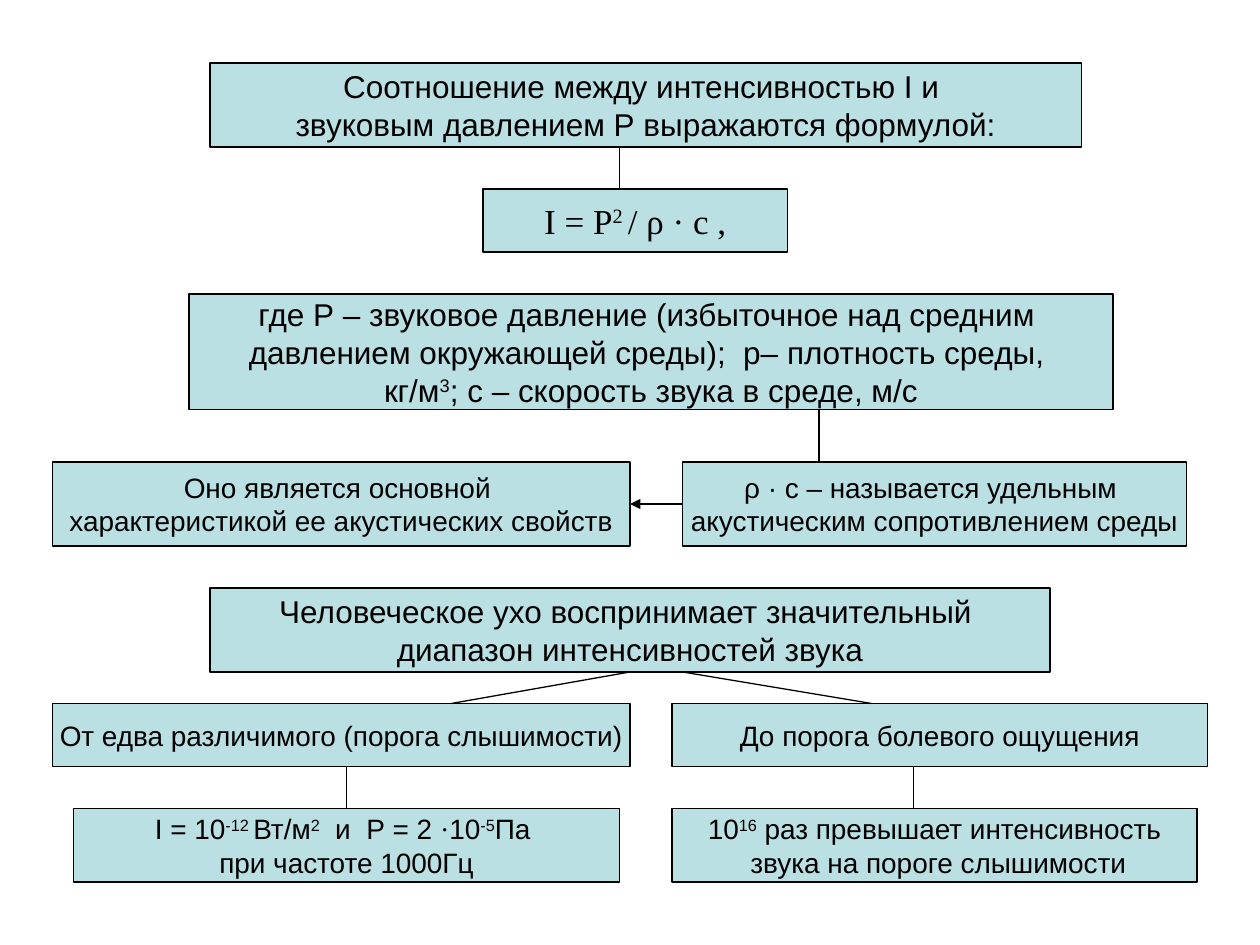
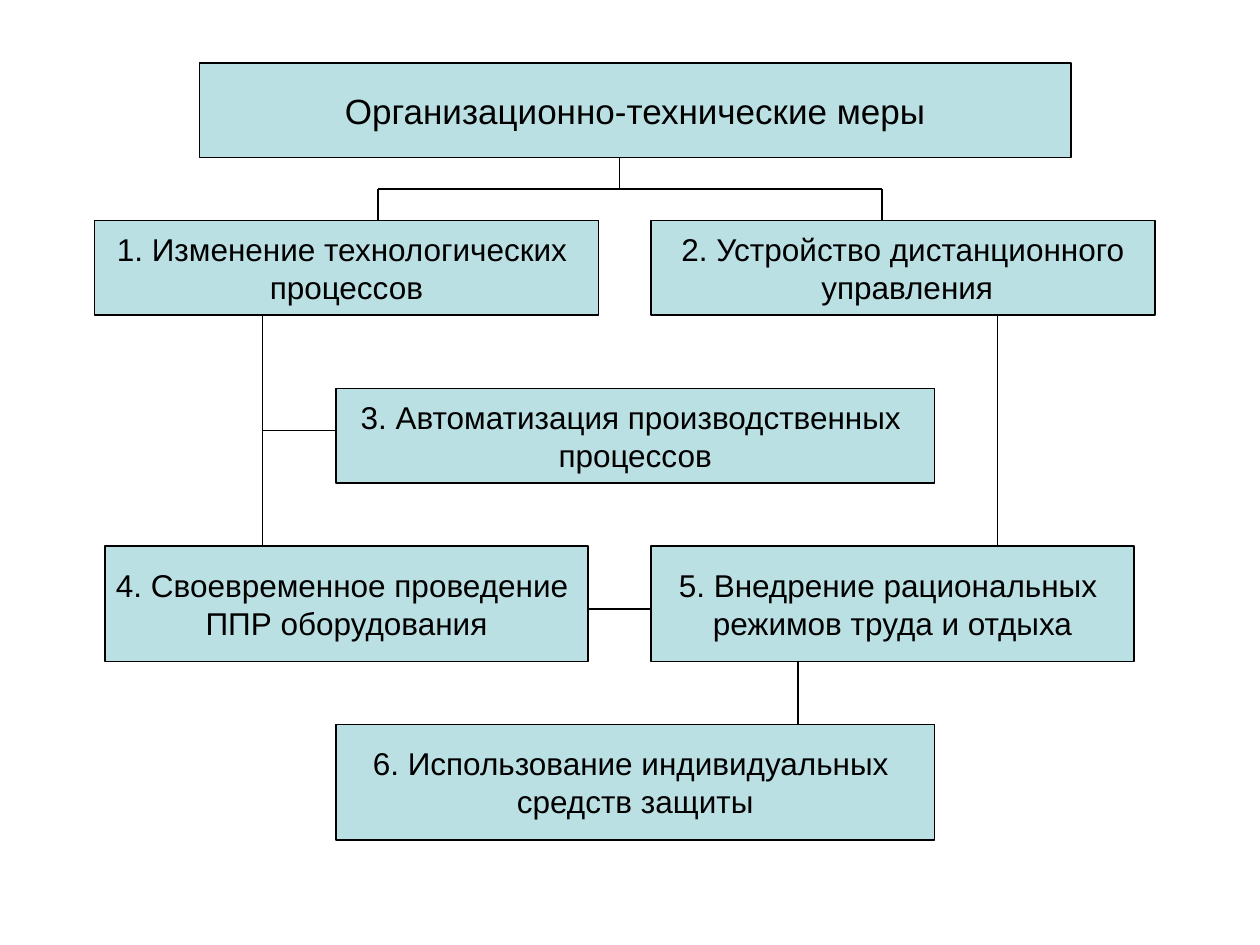
from pptx import Presentation
from pptx.dml.color import RGBColor
from pptx.enum.shapes import MSO_CONNECTOR, MSO_SHAPE
from pptx.enum.text import MSO_ANCHOR, MSO_AUTO_SIZE, PP_ALIGN
from pptx.oxml.ns import qn
from pptx.util import Pt
from lxml import etree

RECTANGLE = MSO_SHAPE.RECTANGLE
STRAIGHT = MSO_CONNECTOR.STRAIGHT
CENTER = PP_ALIGN.CENTER
FRAME_FORMAT = {
    "word_wrap": False,
    "auto_size": MSO_AUTO_SIZE.NONE,
    "vertical_anchor": MSO_ANCHOR.MIDDLE,
}
BOX_FILL = "BBE0E3"
INK = "000000"
LINE_WIDTH = Pt(0.75)
SANS = "Arial"
SERIF = "Times New Roman"
TITLE_ONLY = 5

# Runs are separated by |; a leading ^ raises a run and a leading ~ sets it in serif.
SLIDES = [
    {
        "boxes": [
            (120, 36, 498, 48, 18, SANS, ["Соотношение между интенсивностью I и ",
                                          "звуковым давлением Р выражаются формулой:"]),
            (276, 108, 174, 36, 20, SERIF, ["I = P|^2 |/ ρ · с ,"]),
            (108, 168, 528, 66, 18, SANS, ["где Р – звуковое давление (избыточное над средним ",
                                           "давлением окружающей среды);  p– плотность среды, ",
                                           "кг/м|^3|; с – скорость звука в среде, м/с"]),
            (390, 264, 288, 48, 16, SANS, ["ρ · с – называется удельным ",
                                           "акустическим сопротивлением среды"]),
            (30, 264, 330, 48, 16, SANS, ["Оно является основной ",
                                          "характеристикой ее акустических свойств"]),
            (120, 336, 480, 48, 18, SANS, ["Человеческое ухо воспринимает значительный ",
                                           "диапазон интенсивностей звука"]),
            (384, 402, 306, 36, 16, SANS, ["До порога болевого ощущения"]),
            (30, 402, 330, 36, 16, SANS, ["От едва различимого (порога слышимости)"]),
            (384, 462, 300, 42, 16, SANS, ["10|^16| раз превышает интенсивность",
                                           " звука на пороге слышимости"]),
            (42, 462, 312, 42, 16, SANS, ["I = 10|^-12 |Вт/м|^2|  и  Р = 2 |~·|10|^-5|Па ",
                                          "при частоте 1000Гц"]),
        ],
        "lines": [
            (354, 84, 354, 108),
            (468, 234, 468, 264),
            (360, 384, 258, 402),
            (390, 384, 498, 402),
            (198, 438, 198, 462),
            (522, 438, 522, 462),
        ],
        "arrows": [(390, 288, 360, 288)],
    },
    {
        "boxes": [
            (114, 36, 498, 54, 20, SANS, ["Организационно-технические меры"]),
            (372, 126, 288, 54, 18, SANS, ["2. Устройство дистанционного", " управления"]),
            (54, 126, 288, 54, 18, SANS, ["1. Изменение технологических ", "процессов"]),
            (192, 222, 342, 54, 18, SANS, ["3. Автоматизация производственных ", "процессов"]),
            (372, 312, 276, 66, 18, SANS, ["5. Внедрение рациональных ", "режимов труда и отдыха"]),
            (60, 312, 276, 66, 18, SANS, ["4. Своевременное проведение ", "ППР оборудования"]),
            (192, 414, 342, 66, 18, SANS, ["6. Использование индивидуальных ", "средств защиты"]),
        ],
        "lines": [
            (216, 108, 504, 108),
            (354, 90, 354, 108),
            (216, 108, 216, 126),
            (504, 108, 504, 126),
            (150, 180, 150, 312),
            (150, 246, 192, 246),
            (570, 180, 570, 312),
            (336, 348, 372, 348),
            (456, 378, 456, 414),
        ],
        "arrows": [],
    },
]


def paint(color_format, hex_color):
    color_format.rgb = RGBColor.from_string(hex_color)


def write_paragraph(paragraph, text, size, font_name):
    paragraph.alignment = CENTER
    for piece in text.split("|"):
        run = paragraph.add_run()
        run.text = piece.lstrip("^~")
        run_format = {"size": Pt(size), "name": SERIF if piece.startswith("~") else font_name}
        for attribute, value in run_format.items():
            setattr(run.font, attribute, value)
        paint(run.font.color, INK)
        if piece.startswith("^"):
            run._r.get_or_add_rPr().set("baseline", "30000")


presentation = Presentation()
presentation.slide_width = Pt(720)
presentation.slide_height = Pt(540)

for content in SLIDES:
    slide = presentation.slides.add_slide(presentation.slide_layouts[TITLE_ONLY])

    for index, (left, top, width, height, size, font_name, texts) in enumerate(content["boxes"]):
        bounds = {"left": Pt(left), "top": Pt(top), "width": Pt(width), "height": Pt(height)}
        if index == 0:
            shape = slide.shapes.title
            for attribute, value in bounds.items():
                setattr(shape, attribute, value)
        else:
            shape = slide.shapes.add_shape(RECTANGLE, **bounds)
            shape.shadow.inherit = False
        shape.fill.solid()
        paint(shape.fill.fore_color, BOX_FILL)
        paint(shape.line.color, INK)
        shape.line.width = LINE_WIDTH
        frame = shape.text_frame
        for attribute, value in FRAME_FORMAT.items():
            setattr(frame, attribute, value)
        for number, text in enumerate(texts):
            paragraph = frame.add_paragraph() if number else frame.paragraphs[0]
            write_paragraph(paragraph, text, size, font_name)

    for ends in content["lines"] + content["arrows"]:
        connector = slide.shapes.add_connector(STRAIGHT, *[Pt(value) for value in ends])
        paint(connector.line.color, INK)
        connector.line.width = LINE_WIDTH
        properties = connector._element.spPr
        if ends in content["arrows"]:
            etree.SubElement(properties.find(qn("a:ln")), qn("a:tailEnd"), type="triangle")
        etree.SubElement(properties, qn("a:effectLst"))

presentation.save("out.pptx")
